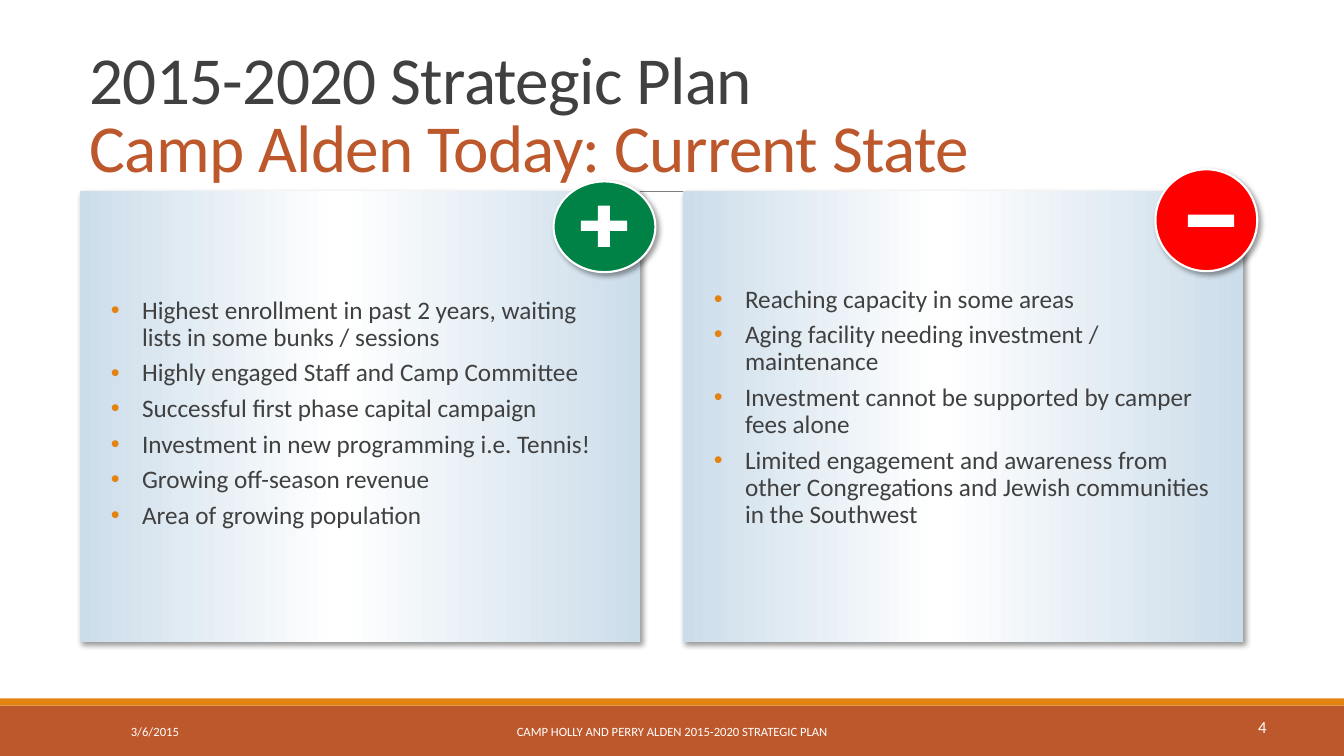
from copy import deepcopy
from lxml import etree
from pptx import Presentation
from pptx.dml.color import RGBColor
from pptx.enum import shapes, text
from pptx.oxml import ns
from pptx.util import Inches, Pt

RECT, OVAL = shapes.MSO_SHAPE.RECTANGLE, shapes.MSO_SHAPE.OVAL
TOP, MIDDLE, BOTTOM = text.MSO_ANCHOR.TOP, text.MSO_ANCHOR.MIDDLE, text.MSO_ANCHOR.BOTTOM
LEFT, CENTER = text.PP_ALIGN.LEFT, text.PP_ALIGN.CENTER
WHITE, DARK, RUST, ORANGE, PALE = "FFFFFF", "404040", "BD582C", "E48312", "CCDDEA"
rgb = RGBColor.from_string


def add_block(parent, kind, box, fill=None, outline=None, shadow=False):
    block = parent.add_shape(kind, *map(Inches, box))
    block.shadow.inherit = False
    if fill:
        block.fill.solid()
        block.fill.fore_color.rgb = rgb(fill)
    if outline:
        block.line.color.rgb = rgb(outline)
        block.line.width = Pt(1.5)
    else:
        block.line.fill.background()
    if shadow:
        effects = block._element.spPr.find(ns.qn("a:effectLst"))
        outer = etree.SubElement(effects, ns.qn("a:outerShdw"), blurRad=str(Pt(4)),
                                 dist=str(Pt(3)), dir="2700000", algn="tl", rotWithShape="0")
        black = etree.SubElement(outer, ns.qn("a:srgbClr"), val="000000")
        etree.SubElement(black, ns.qn("a:alpha"), val="40000")
    return block


def write(paragraph, words, size, color):
    run = paragraph.add_run()
    run.text = words
    run.font.name, run.font.size = "Calibri", Pt(size)
    run.font.color.rgb = rgb(color)
    return run


deck = Presentation()
deck.slide_width, deck.slide_height = Inches(13.33), Inches(7.5)
slide = deck.slides.add_slide(deck.slide_layouts[6])

# Footer bands and the rule under the title
add_block(slide.shapes, RECT, (0, 7, 13.33, 0.5), RUST)
add_block(slide.shapes, RECT, (0, 6.93, 13.33, 0.07), ORANGE)
rule = slide.shapes.add_connector(shapes.MSO_CONNECTOR.STRAIGHT, Inches(1.31), Inches(1.9),
                                  Inches(12.21), Inches(1.9))
rule.line.color.rgb = rgb("808080")
rule.line.width = Pt(0.5)
etree.SubElement(rule._element.spPr, ns.qn("a:effectLst"))

# Title
title = slide.shapes.add_textbox(*map(Inches, (0.79, 0.31, 11, 1.59))).text_frame
title.word_wrap, title.vertical_anchor = True, BOTTOM
heading = title.paragraphs[0]
heading.line_spacing = 0.85
plan = write(heading, "2015-2020 Strategic Plan", 48, DARK)
heading.add_line_break()
state = write(heading, "Camp Alden Today: Current State", 48, RUST)
for run in (plan, state):
    run.font._element.set("spc", "-50")

# Panels of strengths and weaknesses: left edge, top inset, points
panels = [
    (0.79, 1.05, ["Highest enrollment in past 2 years, waiting lists in some bunks / sessions",
                  "Highly engaged Staff and Camp Committee",
                  "Successful first phase capital campaign",
                  "Investment in new programming i.e. Tennis!",
                  "Growing off-season revenue",
                  "Area of growing population"]),
    (6.77, 0.94, ["Reaching capacity in some areas",
                  "Aging facility needing investment / maintenance",
                  "Investment cannot be supported by camper fees alone",
                  "Limited engagement and awareness from other Congregations and Jewish "
                  "communities in the Southwest"]),
]
for left, top_inset, points in panels:
    panel = add_block(slide.shapes, RECT, (left, 1.9, 5.56, 4.47), shadow=True)
    panel.fill.gradient()
    panel.fill.gradient_angle = 0
    stops = panel._element.spPr.find(".//" + ns.qn("a:gsLst"))
    stops.append(deepcopy(stops[0]))
    for stop, (position, color) in zip(panel.fill.gradient_stops,
                                       [(0, PALE), (0.46, WHITE), (1, PALE)]):
        stop.position, stop.color.rgb = position, rgb(color)

    frame = panel.text_frame
    frame_format = {"word_wrap": True, "vertical_anchor": TOP, "margin_left": Inches(0.31),
                    "margin_right": Inches(0.31), "margin_top": Inches(top_inset),
                    "margin_bottom": 0}
    for name, value in frame_format.items():
        setattr(frame, name, value)
    for i, point in enumerate(points):
        item = frame.add_paragraph() if i else frame.paragraphs[0]
        item_format = {"alignment": LEFT, "line_spacing": 0.9,
                       "space_before": Pt(2), "space_after": Pt(4)}
        for name, value in item_format.items():
            setattr(item, name, value)
        props = item._p.get_or_add_pPr()
        props.set("marL", str(Inches(0.31)))
        props.set("indent", str(-Inches(0.31)))
        bullet_color = etree.SubElement(props, ns.qn("a:buClr"))
        etree.SubElement(bullet_color, ns.qn("a:srgbClr"), val=ORANGE)
        etree.SubElement(props, ns.qn("a:buFont"), typeface="Arial")
        etree.SubElement(props, ns.qn("a:buChar"), char="•")
        write(item, point, 18, DARK)

# Plus and minus badges: disc, colour, bars with rotation
badges = [
    ((5.49, 1.8, 1.01, 0.9), "008246", [((5.93, 2.04, 0.12, 0.41), 0),
                                        ((5.94, 2.01, 0.1, 0.46), 90)]),
    ((11.46, 1.68, 1.01, 1.01), "FF0000", [((11.95, 1.96, 0.12, 0.46), 90)]),
]
for disc, color, bars in badges:
    badge = slide.shapes.add_group_shape().shapes
    add_block(badge, OVAL, disc, color, outline=WHITE, shadow=True)
    for bar, rotation in bars:
        add_block(badge, RECT, bar, WHITE).rotation = rotation

# Footer: date, plan name, page number
footers = [
    ("3/6/2015", (1.2, 7.06, 2.7, 0.4), 9, LEFT, MIDDLE, True),
    ("CAMP HOLLY AND PERRY ALDEN 2015-2020 STRATEGIC PLAN", (4.03, 7.06, 5.27, 0.4),
     9, CENTER, MIDDLE, True),
    ("4", (12.38, 7.06, 0.29, 0.3), 12, LEFT, TOP, False),
]
for words, box, size, alignment, anchor, wrap in footers:
    footer = slide.shapes.add_textbox(*map(Inches, box)).text_frame
    footer.word_wrap, footer.vertical_anchor = wrap, anchor
    footer.paragraphs[0].alignment = alignment
    write(footer.paragraphs[0], words, size, WHITE)

deck.save("out.pptx")
